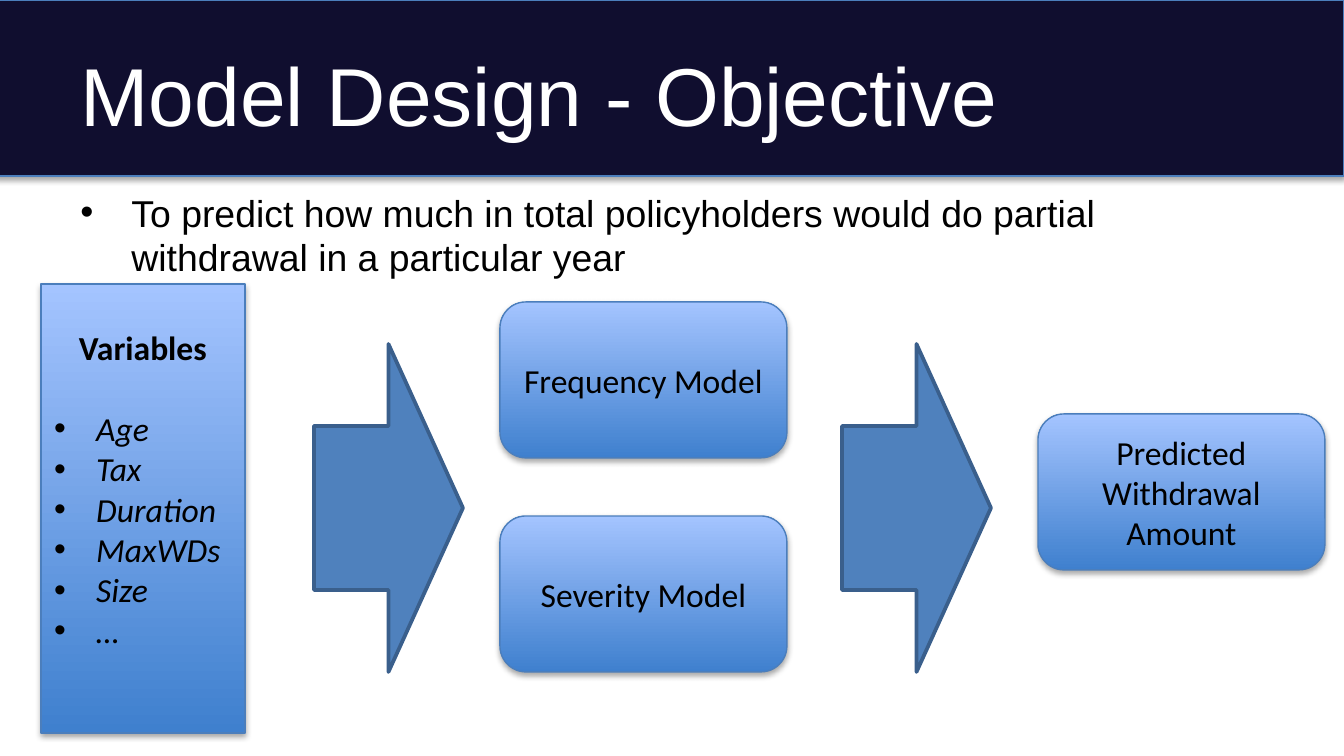
from lxml.etree import SubElement
from pptx import Presentation
from pptx.dml.color import RGBColor
from pptx.enum.shapes import MSO_SHAPE as Preset
from pptx.enum.text import MSO_ANCHOR as Anchor, MSO_AUTO_SIZE as AutoSize, PP_ALIGN as Align
from pptx.oxml.ns import qn
from pptx.util import Pt

PX = 914400 / 134.4
NAVY, EDGE, BLACK, WHITE = "100E2F", "4B7EBC", "000000", "FFFFFF"
VARIABLES = ["Age", "Tax", "Duration", "MaxWDs", "Size", "…"]


def px(value):
    return round(value * PX)


def color(hex_string):
    return RGBColor.from_string(hex_string)


def place(shape, left, top, width, height):
    shape.left, shape.top = px(left), px(top)
    shape.width, shape.height = px(width), px(height)


def write(paragraph, text, size=18, font="Calibri", fill=BLACK, bold=False,
          italic=False, align=Align.LEFT, after=0):
    paragraph.alignment = align
    paragraph.space_after = Pt(after)
    run = paragraph.add_run()
    run.text = text
    run.font.name, run.font.size = font, Pt(size)
    run.font.bold, run.font.italic = bold, italic
    run.font.color.rgb = color(fill)


def add_bullet(paragraph, indent):
    properties = paragraph._p.get_or_add_pPr()
    properties.set("marL", str(px(indent)))
    properties.set("indent", str(-px(indent)))
    SubElement(properties, qn("a:buFont"), typeface="Arial")
    SubElement(properties, qn("a:buChar"), char="•")


def add_shadow(shape):
    effects = shape.element.spPr.find(qn("a:effectLst"))
    shadow = SubElement(effects, qn("a:outerShdw"), blurRad="40000", dist="23000",
                        dir="5400000", rotWithShape="0")
    shade = SubElement(shadow, qn("a:srgbClr"), val=BLACK)
    SubElement(shade, qn("a:alpha"), val="35000")


def add_block(slide, preset, box, fill=None, line=EDGE, line_width=0.75, shadow=True):
    """Add a preset shape, with the blue gradient unless a solid fill is given."""
    shape = slide.shapes.add_shape(preset, *map(px, box))
    if fill:
        shape.fill.solid()
        shape.fill.fore_color.rgb = color(fill)
    else:
        shape.fill.gradient()
        shape.fill.gradient_angle = 90
        for stop, position, shade in zip(shape.fill.gradient_stops, (0, 1), ("3F80CE", "A4C4FF")):
            stop.position = position
            stop.color.rgb = color(shade)
    shape.line.color.rgb = color(line)
    shape.line.width = Pt(line_width)
    shape.shadow.inherit = False
    if shadow:
        add_shadow(shape)
    shape.text_frame.word_wrap = True
    shape.text_frame.vertical_anchor = Anchor.MIDDLE
    return shape


def add_header(slide, text):
    title = slide.shapes.title
    band = add_block(slide, Preset.RECTANGLE, (-5, 0, 1349, 176), fill=NAVY)
    title.element.addprevious(band.element)
    place(title, 67, 31, 1210, 126)
    title.text_frame.auto_size = AutoSize.NONE
    title.text_frame.vertical_anchor = Anchor.MIDDLE
    write(title.text_frame.paragraphs[0], text, size=44, font="Arial", fill=WHITE)


def add_objective(slide, text):
    body = slide.placeholders[1]
    place(body, 67, 183, 1210, 550)
    body.text_frame.auto_size = AutoSize.NONE
    paragraph = body.text_frame.paragraphs[0]
    write(paragraph, text, size=20, font="Arial")
    add_bullet(paragraph, 51)


def add_variables(slide):
    frame = add_block(slide, Preset.RECTANGLE, (41, 284, 204, 449)).text_frame
    frame.margin_bottom = px(47)
    write(frame.paragraphs[0], "Variables", bold=True, align=Align.CENTER, after=22)
    for name in VARIABLES:
        paragraph = frame.add_paragraph()
        write(paragraph, name, italic=True)
        add_bullet(paragraph, 42)


def add_model(slide, left, top, text):
    box = add_block(slide, Preset.ROUNDED_RECTANGLE, (left, top, 287, 156))
    write(box.text_frame.paragraphs[0], text, align=Align.CENTER)


def add_arrow(slide, left):
    add_block(slide, Preset.RIGHT_ARROW, (left, 344, 149, 328), fill="4F81BD",
              line="3A5F8C", line_width=2, shadow=False)


def main():
    presentation = Presentation()
    presentation.slide_width, presentation.slide_height = px(1344), px(756)
    slide = presentation.slides.add_slide(presentation.slide_layouts[1])
    add_header(slide, "Model Design - Objective")
    add_objective(slide, "To predict how much in total policyholders would do partial "
                         "withdrawal in a particular year")
    add_variables(slide)
    add_arrow(slide, 314)
    add_model(slide, 500, 302, "Frequency Model")
    add_model(slide, 500, 516, "Severity Model")
    add_arrow(slide, 842)
    add_model(slide, 1038, 414, "Predicted Withdrawal Amount")
    presentation.save("out.pptx")


if __name__ == "__main__":
    main()
